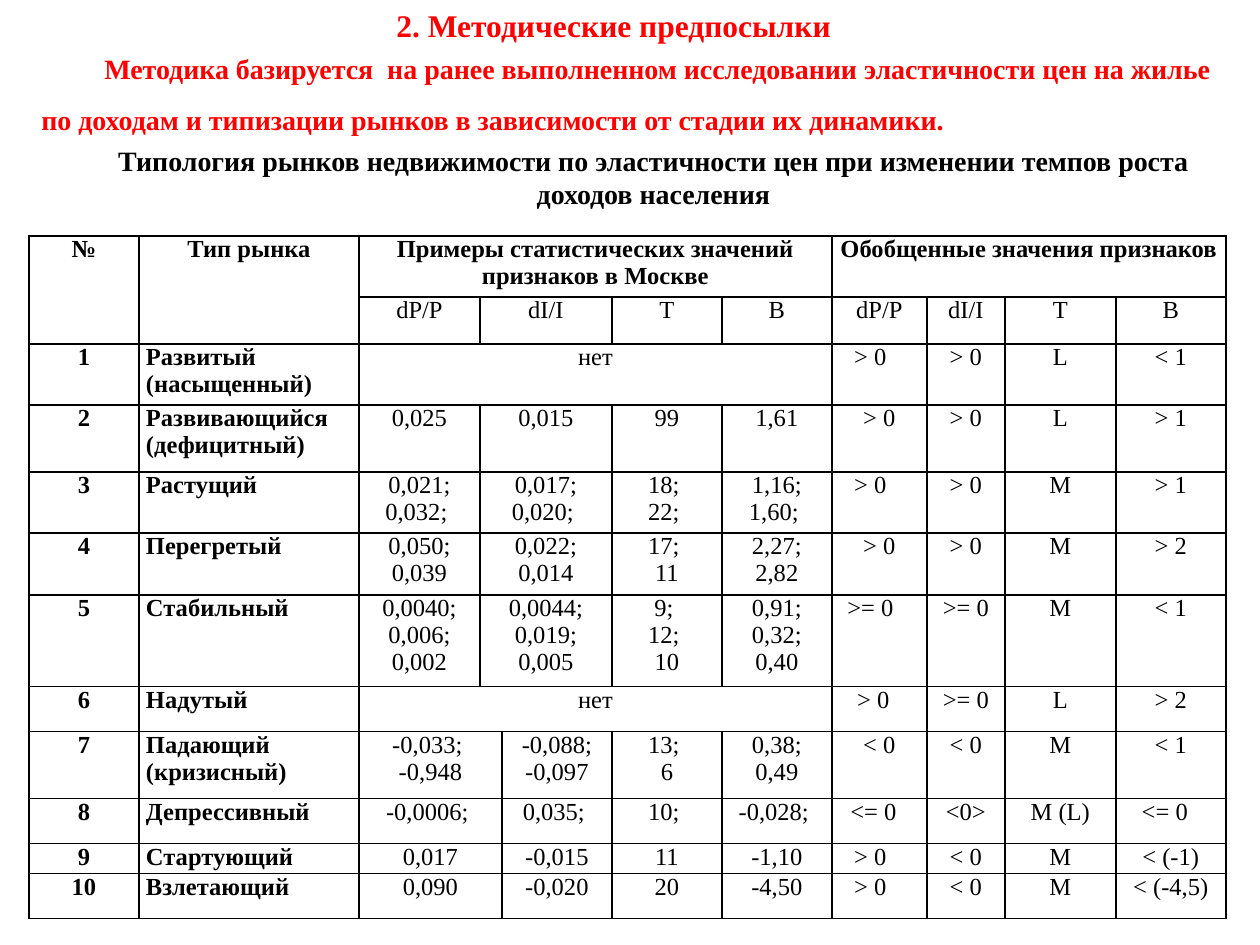
from dataclasses import dataclass

from lxml.etree import SubElement
from pptx import Presentation
from pptx.dml.color import RGBColor
from pptx.enum.text import MSO_AUTO_SIZE as AutoSize, PP_ALIGN as Align
from pptx.oxml.ns import qn
from pptx.util import Emu, Pt

EMU_PER_PX = 914400 // 126
FONT = "Times New Roman"
RED, BLACK = "FF0000", "000000"


def px(length: int) -> Emu:
    return Emu(length * EMU_PER_PX)


def colour(code: str) -> RGBColor:
    return RGBColor.from_string(code)


@dataclass
class Heading:
    text: str
    left: int
    top: int
    width: int
    height: int
    size: int
    colour: str
    align: Align = Align.LEFT
    wrap: bool = True
    indent: int = 0
    line_spacing: float = 1.0


@dataclass
class Row:
    height: int
    starts: tuple  # column where each cell begins; it runs to the next start
    texts: list


HEADINGS = [
    Heading("Методика базируется  на ранее выполненном исследовании эластичности цен на жилье "
            "по доходам и типизации рынков в зависимости от стадии их динамики.",
            29, 29, 1201, 110, 16, RED, indent=63, line_spacing=1.5),
    Heading("Типология рынков недвижимости по эластичности цен при изменении темпов роста "
            "доходов населения", 88, 137, 1131, 81, 16, BLACK, Align.CENTER),
    Heading("2. Методические предпосылки", 384, 0, 473, 50, 18, RED, wrap=False),
]

# Table layouts: the narrow column 3 joins its right or its left neighbour
WIDTHS = [110, 220, 121, 22, 110, 110, 110, 95, 78, 111, 110]
GROUPS = (0, 1, 2, 7)
NO_EXAMPLES = (0, 1, 2, 7, 8, 9, 10)
JOIN_RIGHT = (0, 1, 2, 3, 5, 6, 7, 8, 9, 10)
JOIN_LEFT = (0, 1, 2, 4, 5, 6, 7, 8, 9, 10)
HEADER_ROWS = 2

ROWS = [
    Row(61, GROUPS, ["№", "Тип рынка", "Примеры статистических значений признаков в Москве",
                     "Обобщенные значения признаков"]),
    Row(47, JOIN_RIGHT, ["", "", "dP/P", "dI/I", "Т", "В", "dP/P", "dI/I", "Т", "В"]),
    Row(61, NO_EXAMPLES, ["1", "Развитый (насыщенный)", "нет", "> 0", "> 0", "L", "< 1"]),
    Row(67, JOIN_RIGHT, ["2", "Развивающийся (дефицитный) ", "0,025", "0,015", "99", "1,61",
                         "> 0", "> 0", "L", "> 1"]),
    Row(61, JOIN_RIGHT, ["3", "Растущий", "0,021; 0,032; ", "0,017; 0,020; ", "18; \n22; ",
                         "1,16; 1,60; ", "> 0", "> 0", "М", "> 1"]),
    Row(62, JOIN_RIGHT, ["4", "Перегретый", "0,050; 0,039", "0,022; 0,014", "17; \n11",
                         "2,27; 2,82", "> 0", "> 0", "М", "> 2"]),
    Row(92, JOIN_RIGHT, ["5", "Стабильный", "0,0040; 0,006; 0,002", "0,0044; 0,019; 0,005",
                         "9; \n12; \n10", "0,91; 0,32; 0,40", ">= 0", ">= 0", "М", "< 1"]),
    Row(45, NO_EXAMPLES, ["6", "Надутый", "нет", "> 0", ">= 0", "L", "> 2"]),
    Row(67, JOIN_LEFT, ["7", "Падающий (кризисный)", "-0,033; \n-0,948", "-0,088; -0,097",
                        "13; \n6", "0,38; 0,49", "< 0", "< 0", "М", "< 1"]),
    Row(45, JOIN_LEFT, ["8", "Депрессивный", "-0,0006; ", "0,035; ", "10; ", "-0,028; ",
                        "<= 0", "<0>", "М (L)", "<= 0"]),
    Row(30, JOIN_LEFT, ["9", "Стартующий", "0,017", "-0,015", "11", "-1,10",
                        "> 0", "< 0", "М", "< (-1)"]),
    Row(45, JOIN_LEFT, ["10", "Взлетающий", "0,090", "-0,020", "20", "-4,50",
                        "> 0", "< 0", "М", "< (-4,5)"]),
]

# Extra right margin of the cells set a little left of centre, by (row, column)
EXTRA_MARGIN = {(2, 7): 18, (4, 7): 18, (6, 7): 18, (10, 7): 18, (11, 7): 18,
                (7, 7): 12, (9, 7): 12, (9, 10): 12}


def style(para, size: int, code: str, bold: bool, align: Align) -> None:
    para.alignment = align
    font = para.font
    font.name, font.size, font.bold = FONT, Pt(size), bold
    font.color.rgb = colour(code)


def draw_heading(page, heading: Heading) -> None:
    box = page.shapes.add_textbox(px(heading.left), px(heading.top),
                                  px(heading.width), px(heading.height))
    frame = box.text_frame
    frame.word_wrap = heading.wrap
    frame.auto_size = AutoSize.SHAPE_TO_FIT_TEXT
    frame.text = heading.text
    para = frame.paragraphs[0]
    style(para, heading.size, heading.colour, True, heading.align)
    para.line_spacing = heading.line_spacing
    if heading.indent:
        properties = para._p.get_or_add_pPr()
        properties.set("marL", "0")
        properties.set("indent", str(px(heading.indent)))


def draw_borders(cell) -> None:
    cell.fill.background()
    properties = cell._tc.get_or_add_tcPr()
    for position, side in enumerate(("lnL", "lnR", "lnT", "lnB")):
        line = SubElement(properties, qn(f"a:{side}"), w=str(Pt(1)))
        fill = SubElement(line, qn("a:solidFill"))
        SubElement(fill, qn("a:srgbClr"), val=BLACK)
        properties.insert(position, line)


def fill_cell(cell, text: str, row: int, column: int) -> None:
    cell.margin_left = px(7)
    cell.margin_right = px(7 + EXTRA_MARGIN.get((row, column), 0))
    cell.margin_top = cell.margin_bottom = 0
    cell.text = text
    bold = row == 0 or (row >= HEADER_ROWS and column < 2)
    market_name = row >= HEADER_ROWS and column == 1
    for para in cell.text_frame.paragraphs:
        style(para, 14, BLACK, bold, Align.JUSTIFY if market_name else Align.CENTER)


def draw_table(page, left: int, top: int) -> None:
    table = page.shapes.add_table(len(ROWS), len(WIDTHS), px(left), px(top), px(sum(WIDTHS)),
                                  px(sum(row.height for row in ROWS))).table
    table.first_row = table.horz_banding = False
    for column, width in zip(table.columns, WIDTHS):
        column.width = px(width)
    for number, row in enumerate(ROWS):
        table.rows[number].height = px(row.height)
        for column in range(len(WIDTHS)):
            draw_borders(table.cell(number, column))
        ends = row.starts[1:] + (len(WIDTHS),)
        for start, end, text in zip(row.starts, ends, row.texts):
            cell = table.cell(number, start)
            if end - start > 1:
                cell.merge(table.cell(number, end - 1))
            fill_cell(cell, text, number, start)
    # The number and market headings cover both header rows
    for column in (0, 1):
        table.cell(0, column).merge(table.cell(HEADER_ROWS - 1, column))


def main() -> None:
    deck = Presentation()
    deck.slide_width, deck.slide_height = px(1260), px(945)
    page = deck.slides.add_slide(deck.slide_layouts[6])
    body, caption, title = HEADINGS
    draw_heading(page, body)
    draw_heading(page, caption)
    draw_table(page, 29, 236)
    draw_heading(page, title)
    deck.save("out.pptx")


if __name__ == "__main__":
    main()
